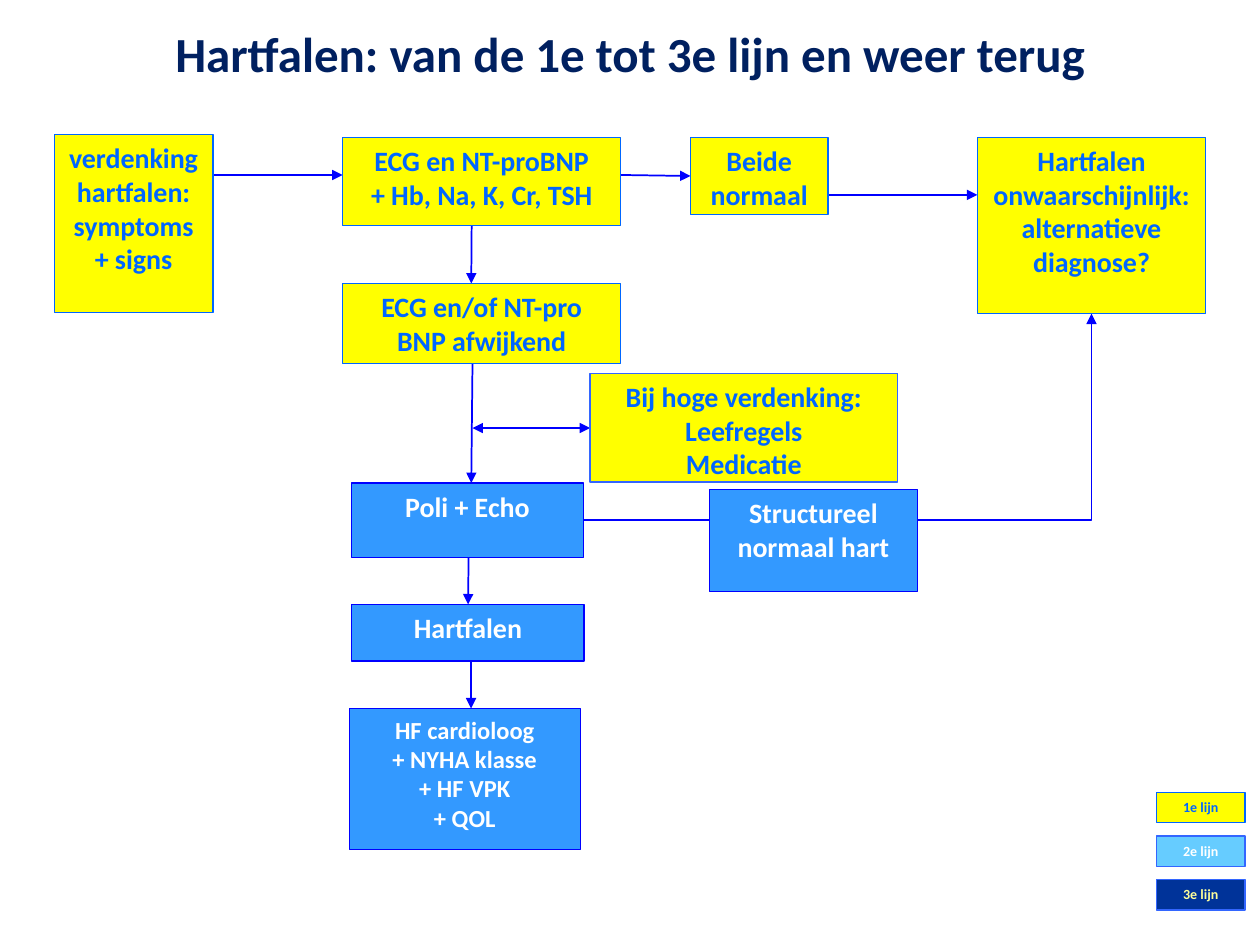
from dataclasses import dataclass

from lxml import etree
from pptx import Presentation
from pptx.dml.color import RGBColor
from pptx.enum.shapes import MSO_CONNECTOR, MSO_SHAPE
from pptx.enum.text import MSO_ANCHOR, MSO_AUTO_SIZE, PP_ALIGN
from pptx.oxml.ns import qn
from pptx.slide import Slide
from pptx.text.text import TextFrame
from pptx.util import Pt

RECTANGLE = MSO_SHAPE.RECTANGLE
STRAIGHT, ELBOW = MSO_CONNECTOR.STRAIGHT, MSO_CONNECTOR.ELBOW
TOP, MIDDLE = MSO_ANCHOR.TOP, MSO_ANCHOR.MIDDLE
CENTER = PP_ALIGN.CENTER
NO_AUTO_SIZE = MSO_AUTO_SIZE.NONE

FONT = "Calibri"
TITLE_ONLY_LAYOUT = 5
COLORS = {
    "white": "FFFFFF",
    "title": "002060",
    "arrow": "0000FF",
    "yellow": "FFFF00",
    "text_blue": "0066FF",
    "edge_blue": "3366FF",
    "blue": "3399FF",
    "light_blue": "66CCFF",
    "dark_blue": "003399",
    "pale_yellow": "FFFF99",
}


@dataclass(frozen=True)
class Style:
    fill: str
    line: str
    text: str


@dataclass(frozen=True)
class Box:
    text: str
    left: float
    top: float
    width: float
    height: float
    style: Style
    size: float = 16


@dataclass(frozen=True)
class Arrow:
    start: tuple[float, float]
    end: tuple[float, float]
    two_way: bool = False
    bent: bool = False


FIRST_LINE = Style("yellow", "text_blue", "text_blue")
ADVICE = Style("yellow", "edge_blue", "text_blue")
SECOND_LINE = Style("blue", "arrow", "white")

BOXES = [
    Box("verdenking hartfalen: symptoms + signs", 31, 77, 90.7, 101.5, FIRST_LINE),
    Box("ECG en NT-proBNP\n+ Hb, Na, K, Cr, TSH", 195.8, 78.5, 159, 50.5, FIRST_LINE),
    Box("Beide normaal", 394.6, 78.5, 78.5, 44, FIRST_LINE),
    Box("Hartfalen onwaarschijnlijk: alternatieve diagnose?",
        558.5, 78.5, 130.5, 100.8, FIRST_LINE),
    Box("ECG en/of NT-pro\nBNP afwijkend", 195.8, 162, 159, 45.7, FIRST_LINE),
    Box("Bij hoge verdenking:\nLeefregels\nMedicatie", 337.2, 213.3, 175.7, 62.2, ADVICE),
    Box("Poli + Echo", 201, 276, 132.3, 42.6, SECOND_LINE),
    Box("Structureel normaal hart", 405.4, 279.6, 118.8, 58.3, SECOND_LINE),
    Box("Hartfalen", 201, 345.4, 132.8, 32.3, SECOND_LINE),
    Box("HF cardioloog\n+ NYHA klasse\n+ HF VPK\n+ QOL",
        199.6, 404.8, 132, 80.6, SECOND_LINE, 14),
]

LEGEND_TOP, LEGEND_STEP = 452.9, 24.9
LEGEND = [
    ("1e lijn", FIRST_LINE),
    ("2e lijn", Style("light_blue", "edge_blue", "white")),
    ("3e lijn", Style("dark_blue", "edge_blue", "pale_yellow")),
]

ARROWS = [
    Arrow((121.7, 100), (195.8, 100)),
    Arrow((354.5, 100), (394.6, 100.6)),
    Arrow((473, 111.4), (558.5, 111.4)),
    Arrow((269.8, 93.6), (269.3, 162)),
    Arrow((270, 207.5), (269.3, 276)),
    Arrow((268.2, 277.2), (267.5, 345.4)),
    Arrow((269.2, 361.4), (269.2, 404.8)),
    Arrow((270, 244.6), (337.2, 244.6), two_way=True),
    Arrow((333.4, 297.2), (623.7, 179.3), bent=True),
]


def rgb(name: str) -> RGBColor:
    return RGBColor.from_string(COLORS[name])


def write_text(frame: TextFrame, text: str, size: float, color: str, anchor=TOP) -> None:
    frame.text = text
    frame.word_wrap = True
    frame.auto_size = NO_AUTO_SIZE
    frame.vertical_anchor = anchor
    for paragraph in frame.paragraphs:
        paragraph.alignment = CENTER
        paragraph.font.name = FONT
        paragraph.font.size = Pt(size)
        paragraph.font.bold = True
        paragraph.font.color.rgb = rgb(color)


def place_title(slide: Slide) -> None:
    title = slide.shapes.title
    title.left, title.top, title.width, title.height = Pt(0), Pt(10), Pt(720), Pt(41)
    title.fill.solid()
    title.fill.fore_color.rgb = rgb("white")
    write_text(title.text_frame, "Hartfalen: van de 1e tot 3e lijn en weer terug",
               28, "title", MIDDLE)


def draw_box(slide: Slide, box: Box) -> None:
    shape = slide.shapes.add_shape(
        RECTANGLE, Pt(box.left), Pt(box.top), Pt(box.width), Pt(box.height))
    shape.shadow.inherit = False
    shape.fill.solid()
    shape.fill.fore_color.rgb = rgb(box.style.fill)
    shape.line.color.rgb = rgb(box.style.line)
    shape.line.width = Pt(0.75)
    write_text(shape.text_frame, box.text, box.size, box.style.text)


def draw_arrow(slide: Slide, arrow: Arrow) -> None:
    connector = slide.shapes.add_connector(
        ELBOW if arrow.bent else STRAIGHT,
        *(Pt(value) for value in arrow.start + arrow.end))
    connector.line.color.rgb = rgb("arrow")
    connector.line.width = Pt(1)
    properties = connector._element.spPr
    if arrow.bent:
        # One corner only: across first, then up.
        properties.find(qn("a:prstGeom")).set("prst", "bentConnector2")
    outline = properties.find(qn("a:ln"))
    for tag in ("a:headEnd", "a:tailEnd") if arrow.two_way else ("a:tailEnd",):
        etree.SubElement(outline, qn(tag), type="triangle")
    etree.SubElement(properties, qn("a:effectLst"))


def main() -> None:
    presentation = Presentation()
    presentation.slide_width, presentation.slide_height = Pt(720), Pt(540)
    slide = presentation.slides.add_slide(presentation.slide_layouts[TITLE_ONLY_LAYOUT])
    place_title(slide)
    for arrow in ARROWS:
        draw_arrow(slide, arrow)
    for box in BOXES:
        draw_box(slide, box)
    for row, (label, style) in enumerate(LEGEND):
        draw_box(slide, Box(label, 661, LEGEND_TOP + row * LEGEND_STEP, 50.4, 17.3, style, 8))
    presentation.save("out.pptx")


if __name__ == "__main__":
    main()
